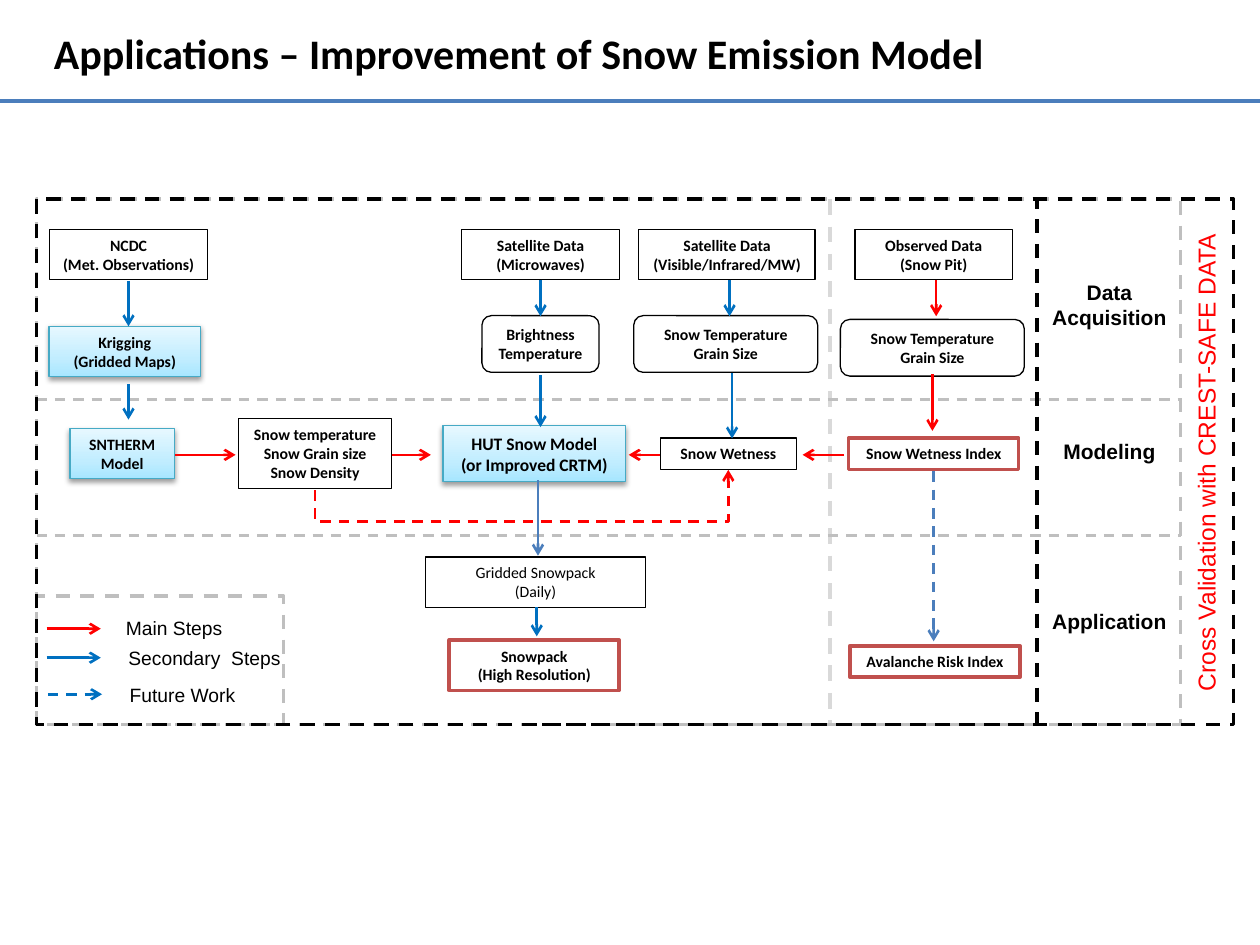
"""Build the snow emission model flow chart slide."""
import pptx
import pptx.dml.color
import pptx.enum.dml
import pptx.enum.shapes
import pptx.enum.text
import pptx.oxml
import pptx.oxml.ns
import pptx.util

SHAPE = pptx.enum.shapes.MSO_SHAPE
CONNECTOR = pptx.enum.shapes.MSO_CONNECTOR
ALIGN = pptx.enum.text.PP_ALIGN
ANCHOR = pptx.enum.text.MSO_ANCHOR
NS = pptx.oxml.ns.nsdecls("a")

WIDTH, HEIGHT = 10, 7.5
BLACK, WHITE, RED, BLUE, STEEL = "000000", "FFFFFF", "FF0000", "0070C0", "4B7EBC"
GRAY, PALE, BRICK, TEAL = "BFBFBF", "D9D9D9", "C0504D", "46AAC5"
GRADIENT = [(0, "A7E6FF"), (35, "C1EDFF"), (100, "E7F8FF")]

LEFT, TOP, FRAME_H = 0.29, 1.58, 4.17
BOTTOM = TOP + FRAME_H
STAGE_X, STAGE_W = 8.23, 1.15
COLS = {"station": 0.99, "state": 2.5, "microwave": 4.26, "visible": 5.77, "pit": 7.41}
ROWS = {"source": 2.02, "derived": 2.73, "pit derived": 2.76, "gridded": 2.79,
        "model": 3.6, "daily": 4.62, "risk": 5.25, "product": 5.28}

STYLES = {
    "plain": (SHAPE.RECTANGLE, None, BLACK, 0.75),
    "round": (SHAPE.ROUNDED_RECTANGLE, None, BLACK, 0.75),
    "model": (SHAPE.RECTANGLE, GRADIENT, TEAL, 0.75),
    "result": (SHAPE.RECTANGLE, WHITE, BRICK, 2),
}

# Column, row, nudge, width, height, style, paragraphs, size, bold
BOXES = [
    ("microwave", "source", 0.03, 1.25, 0.4, "plain", ["Satellite Data\n(Microwaves)"], 9, True),
    ("microwave", "model", -0.02, 1.45, 0.44, "model", ["HUT Snow Model\n(or Improved CRTM)"], 10, True),
    ("microwave", "derived", 0.03, 0.93, 0.45, "round", ["Brightness\nTemperature"], 9, True),
    ("microwave", "daily", -0.01, 1.75, 0.4, "plain", ["Gridded Snowpack\n(Daily)"], 9, False),
    ("microwave", "product", -0.02, 1.35, 0.4, "result", ["Snowpack\n(High Resolution)"], 9, True),
    ("station", "source", 0.03, 1.25, 0.4, "plain", ["NCDC", "(Met. Observations)"], 9, True),
    ("station", "gridded", 0, 1.2, 0.4, "model", ["Krigging\n(Gridded Maps)"], 9, True),
    ("station", "model", -0.02, 0.83, 0.4, "model", ["SNTHERM\nModel"], 9, True),
    ("state", "model", 0, 1.22, 0.56, "plain", ["Snow temperature", "Snow Grain size Snow Density"], 9, True),
    ("visible", "source", 0, 1.4, 0.4, "plain", ["Satellite Data\n(Visible/Infrared/MW)"], 9, True),
    ("visible", "derived", -0.01, 1.46, 0.45, "round", ["Snow Temperature", "Grain Size"], 9, True),
    ("visible", "model", 0.01, 1.08, 0.25, "plain", ["Snow Wetness"], 9, True),
    ("pit", "source", 0, 1.25, 0.4, "plain", ["Observed Data", "(Snow Pit)"], 9, True),
    ("pit", "pit derived", -0.01, 1.46, 0.45, "round", ["Snow Temperature", "Grain Size"], 9, True),
    ("pit", "model", 0, 1.35, 0.25, "result", ["Snow Wetness Index"], 9, True),
    ("pit", "risk", 0.01, 1.35, 0.25, "result", ["Avalanche Risk Index"], 9, True),
]

# x, start y, end y, colour, dashed
DOWN_ARROWS = [
    (1.02, 2.23, 2.59, BLUE, False), (1.02, 3.05, 3.33, BLUE, False),
    (4.29, 2.22, 2.51, BLUE, False), (4.29, 2.98, 3.39, BLUE, False),
    (4.27, 3.81, 4.41, STEEL, False), (4.26, 4.82, 5.05, BLUE, False),
    (5.79, 2.22, 2.51, BLUE, False), (5.81, 2.96, 3.48, BLUE, False),
    (7.43, 2.22, 2.51, RED, False), (7.4, 2.97, 3.42, RED, False),
    (7.41, 3.74, 5.09, STEEL, True),
]
MODEL_ARROWS = [(1.39, 1.87), (3.11, 3.42), (5.24, 4.99), (6.7, 6.37)]
STAGES = [(["Data", "Acquisition"], 2.17, 0.5), (["Modeling"], 3.43, 0.3),
          (["Application"], 4.78, 0.3)]
LEGEND = [("Main Steps", 0.37, 4.99, 0.9, 4.84, RED, False),
          ("Secondary  Steps", 0.37, 5.22, 0.92, 5.08, BLUE, False),
          ("Future Work", 0.38, 5.51, 0.93, 5.37, BLUE, True)]


def inches(*values):
    """Convert numbers to inch lengths."""
    return [pptx.util.Inches(v) for v in values]


def rgb(color):
    """Convert a hex string to a colour."""
    return pptx.dml.color.RGBColor.from_string(color)


def set_line(s, color, width, dashed=False):
    """Style the line of a shape or connector."""
    s.line.color.rgb = rgb(color)
    s.line.width = pptx.util.Pt(width)
    if dashed:
        s.line.dash_style = pptx.enum.dml.MSO_LINE.DASH


def write(s, paragraphs, size, color=BLACK, font="Arial", bold=False,
          align=ALIGN.CENTER, anchor=ANCHOR.TOP):
    """Fill a shape with paragraphs whose lines break at newlines."""
    tf = s.text_frame
    tf.word_wrap = True
    tf.vertical_anchor = anchor
    for i, text in enumerate(paragraphs):
        p = tf.paragraphs[0] if i == 0 else tf.add_paragraph()
        p.alignment = align
        for j, line in enumerate(text.split("\n")):
            if j:
                p.add_line_break()
            r = p.add_run()
            r.text = line
            r.font.name, r.font.size, r.font.bold = font, pptx.util.Pt(size), bold
            r.font.color.rgb = rgb(color)


def add_box(shapes, x, y, w, h, kind, fill, color, width, dashed=False):
    """Add a preset shape with no, solid or gradient fill."""
    s = shapes.add_shape(kind, *inches(x, y, w, h))
    s.shadow.inherit = False
    s.fill.background()
    set_line(s, color, width, dashed)
    if isinstance(fill, str):
        s.fill.solid()
        s.fill.fore_color.rgb = rgb(fill)
    elif fill:
        stops = "".join(f'<a:gs pos="{pos * 1000}"><a:srgbClr val="{c}"/></a:gs>' for pos, c in fill)
        sp = s._element.spPr
        sp.replace(sp.find(pptx.oxml.ns.qn("a:noFill")), pptx.oxml.parse_xml(
            f'<a:gradFill {NS} rotWithShape="1"><a:gsLst>{stops}</a:gsLst>'
            '<a:lin ang="16200000" scaled="0"/></a:gradFill>'))
        sp.find(pptx.oxml.ns.qn("a:effectLst")).append(pptx.oxml.parse_xml(
            f'<a:outerShdw {NS} blurRad="39370" dist="20320" dir="5400000" rotWithShape="0">'
            '<a:srgbClr val="000000"><a:alpha val="38000"/></a:srgbClr></a:outerShdw>'))
    return s


def add_line(shapes, x1, y1, x2, y2, color, width=1.5, dashed=False, arrow=False,
             kind=CONNECTOR.STRAIGHT):
    """Add a connector, with an arrowhead at its end if asked."""
    s = shapes.add_connector(kind, *inches(x1, y1, x2, y2))
    set_line(s, color, width, dashed)
    s._element.spPr.append(pptx.oxml.parse_xml(f"<a:effectLst {NS}/>"))
    if arrow:
        s.line._get_or_add_ln().append(pptx.oxml.parse_xml(f'<a:tailEnd {NS} type="arrow"/>'))
    return s


def add_feedback(shapes, x1, y1, x2, y2, drop):
    """Add a dashed elbow arrow that dips below both of its ends."""
    cx, cy, w, h = (x1 + x2) / 2, (y1 + y2) / 2, x2 - x1, y1 - y2
    s = add_line(shapes, cx + h / 2, cy + w / 2, cx - h / 2, cy - w / 2,
                 RED, dashed=True, arrow=True, kind=CONNECTOR.ELBOW)
    sp = s._element.spPr
    sp.find(pptx.oxml.ns.qn("a:xfrm")).set("rot", "5400000")
    guides = sp.find(pptx.oxml.ns.qn("a:prstGeom")).get_or_add_avLst()
    guides.append(pptx.oxml.parse_xml(
        f'<a:gd {NS} name="adj1" fmla="val {round(-drop / h * 100000)}"/>'))


def add_text(shapes, x, y, w, h, paragraphs, size, **style):
    """Add a text box and return it."""
    s = shapes.add_textbox(*inches(x, y, w, h))
    write(s, paragraphs, size, **style)
    return s


def main():
    """Draw the slide and save it."""
    prs = pptx.Presentation()
    prs.slide_width, prs.slide_height = inches(WIDTH, HEIGHT)
    shapes = prs.slides.add_slide(prs.slide_layouts[6]).shapes

    add_line(shapes, 0, 0.8, WIDTH, 0.8, STEEL, 2.25)
    add_text(shapes, 0.33, 0.17, 8.25, 0.5, ["Applications – Improvement of Snow Emission Model"], 24,
             font="Calibri", bold=True, align=ALIGN.LEFT, anchor=ANCHOR.MIDDLE)

    add_line(shapes, 6.59, TOP, 6.59, BOTTOM, PALE, 2.25, True)
    for y in (3.17, 4.25):
        add_line(shapes, LEFT, y, 9.37, y, GRAY, dashed=True)
    for w, h, color in ((1.96, 1.02, GRAY), (9.08, FRAME_H, GRAY),
                        (7.94, FRAME_H, BLACK), (9.5, FRAME_H, BLACK)):
        add_box(shapes, LEFT, BOTTOM - h, w, h, SHAPE.RECTANGLE, None, color, 2, True)

    for col, row, nudge, w, h, style, paragraphs, size, bold in BOXES:
        s = add_box(shapes, COLS[col] + nudge - w / 2, ROWS[row] - h / 2, w, h, *STYLES[style])
        write(s, paragraphs, size, font="Calibri", bold=bold, anchor=ANCHOR.MIDDLE)

    for x, y1, y2, color, dashed in DOWN_ARROWS:
        add_line(shapes, x, y1, x, y2, color, dashed=dashed, arrow=True)
    for x1, x2 in MODEL_ARROWS:
        add_line(shapes, x1, 3.61, x2, 3.61, RED, arrow=True)
    add_feedback(shapes, 2.5, 3.89, 5.78, 3.73, 0.25)

    for paragraphs, y, h in STAGES:
        add_text(shapes, STAGE_X, y, STAGE_W, h, paragraphs, 12, bold=True)
    s = add_text(shapes, 7.49, 3.5, FRAME_H, 0.34, ["Cross Validation with CREST-SAFE DATA"], 14, color=RED)
    s.rotation = 270

    for text, x, y, text_x, text_y, color, dashed in LEGEND:
        add_line(shapes, x, y, x + 0.43, y, color, dashed=dashed, arrow=True)
        add_text(shapes, text_x, text_y, 1.58, 0.29, [text], 11, align=ALIGN.LEFT)

    prs.save("out.pptx")


if __name__ == "__main__":
    main()
